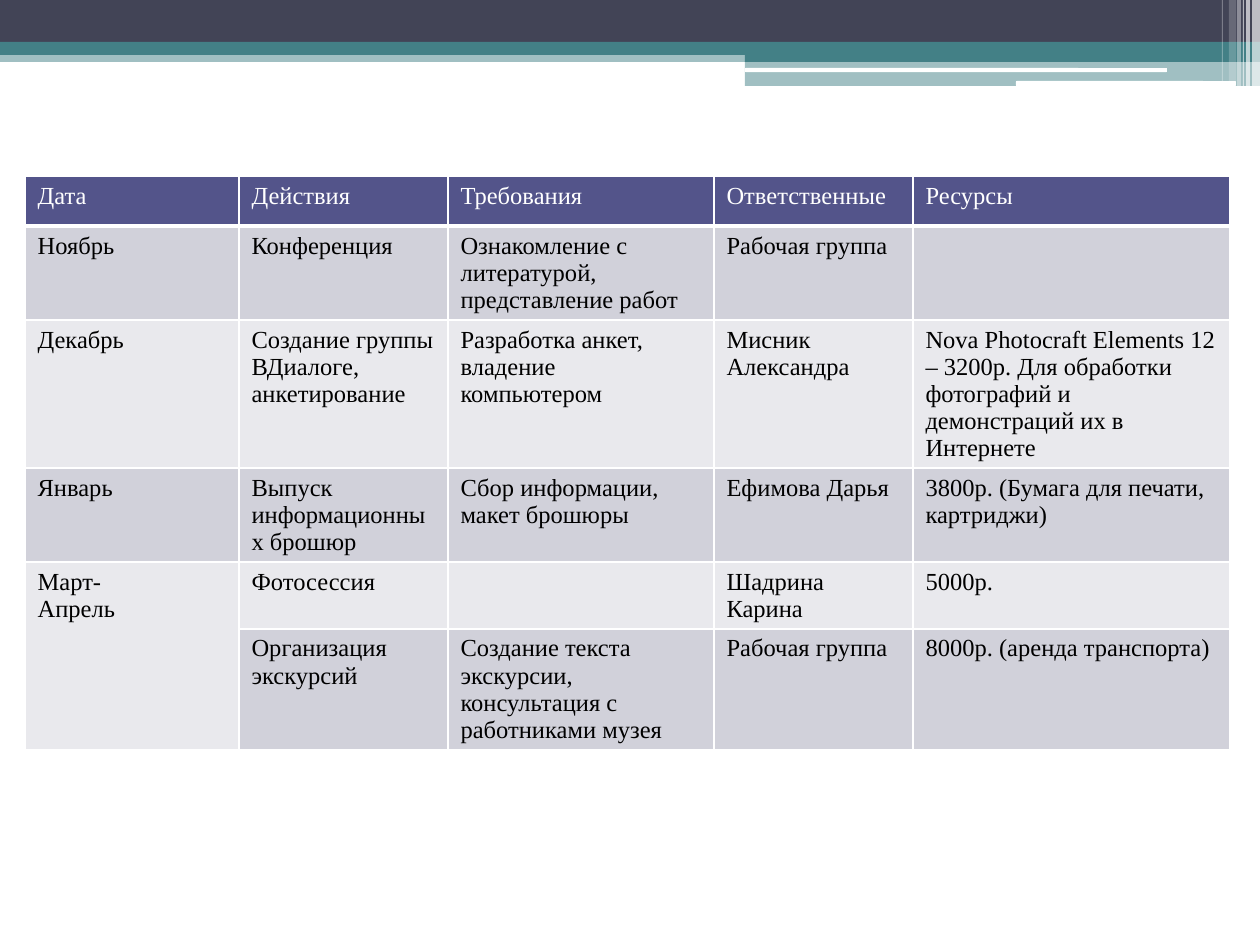
"""Build the project plan slide: a striped header band and a schedule table."""
from lxml.etree import SubElement
from pptx import Presentation
from pptx.dml.color import RGBColor
from pptx.enum.shapes import MSO_SHAPE
from pptx.oxml.ns import qn
from pptx.util import Pt

SCALE = 914400 / 126
HUES = {"white": "FFFFFF", "black": "000000", "slate": "424456", "teal": "438086",
        "head": "53548A", "dark": "D1D1DA", "light": "E9E9ED"}

BANDS = [
    (0, 50, 1260, 12, "teal", 50),
    (0, 0, 1260, 43, "slate", 100),
    (0, 42, 1260, 13, "teal", 100),
    (745, 49, 515, 13, "teal", 100),
    (745, 61, 515, 25, "teal", 50),
]
PILLS = [(745, 68, 422, 4), (1016, 81, 220, 5)]
STRIPES = [(1252, 8, 86, 65), (1246, 4, 86, 65), (1243, 1, 86, 60),
           (1237, 4, 86, 40), (1229, 7, 81, 20), (1222, 1, 81, 30)]

COLS = [214, 209, 266, 199, 317]
PLAN = [
    (50, "head", ["Дата", "Действия", "Требования", "Ответственные", "Ресурсы"]),
    (94, "dark", ["Ноябрь", "Конференция", "Ознакомление с литературой, представление работ",
                  "Рабочая группа", ""]),
    (148, "light", ["Декабрь", "Создание группы ВДиалоге, анкетирование",
                    "Разработка анкет, владение компьютером", "Мисник Александра",
                    "Nova Photocraft Elements 12 – 3200р. Для обработки фотографий "
                    "и демонстраций их в Интернете"]),
    (93, "dark", ["Январь", "Выпуск информационных брошюр",
                  "Сбор информации, макет брошюры", "Ефимова Дарья",
                  "3800р. (Бумага для печати, картриджи)"]),
    (67, "light", ["Март-\nАпрель", "Фотосессия", "", "Шадрина Карина", "5000р."]),
    (121, "dark", ["", "Организация экскурсий",
                   "Создание текста экскурсии, консультация с работниками музея",
                   "Рабочая группа", "8000р. (аренда транспорта)"]),
]


def px(num):
    return round(num * SCALE)


def hue(name):
    return RGBColor.from_string(HUES[name])


def block(slide, box, tone, alpha=100, kind=MSO_SHAPE.RECTANGLE):
    shape = slide.shapes.add_shape(kind, *map(px, box))
    shape.shadow.inherit = False
    shape.line.fill.background()
    shape.fill.solid()
    shape.fill.fore_color.rgb = hue(tone)
    if alpha < 100:
        paint = shape.fill._xPr.find(".//" + qn("a:srgbClr"))
        SubElement(paint, qn("a:alpha"), val=str(alpha * 1000))


def edge(cell, widths):
    props = cell._tc.get_or_add_tcPr()
    for side, width in widths.items():
        line = SubElement(props, qn("a:ln" + side), w=str(Pt(width)))
        fill = SubElement(line, qn("a:solidFill"))
        SubElement(fill, qn("a:srgbClr"), val=HUES["white"])


def write(cell, text, tone, ink):
    cell.fill.solid()
    cell.fill.fore_color.rgb = hue(tone)
    if not text:
        return
    cell.text = text
    form = {"name": "Times New Roman", "size": Pt(14), "bold": False}
    for para in cell.text_frame.paragraphs:
        for run in para.runs:
            for key, value in form.items():
                setattr(run.font, key, value)
            run.font.color.rgb = hue(ink)


def grid(slide):
    tall = sum(row[0] for row in PLAN)
    table = slide.shapes.add_table(len(PLAN), len(COLS), px(25), px(176),
                                   px(sum(COLS)), px(tall)).table
    for col, wide in zip(table.columns, COLS):
        col.width = px(wide)
    for r, (high, tone, texts) in enumerate(PLAN):
        table.rows[r].height = px(high)
        ink = "white" if r == 0 else "black"
        for c, text in enumerate(texts):
            cell = table.cell(r, c)
            edge(cell, {"L": 1, "R": 1, "T": 3 if r == 1 else 1, "B": 1 if r else 3})
            write(cell, text, tone, ink)
    table.cell(4, 0).merge(table.cell(5, 0))


def main():
    deck = Presentation()
    deck.slide_width, deck.slide_height = px(1260), px(945)
    slide = deck.slides.add_slide(deck.slide_layouts[6])
    for *box, tone, alpha in BANDS:
        block(slide, box, tone, alpha)
    for box in PILLS:
        block(slide, box, "white", kind=MSO_SHAPE.ROUNDED_RECTANGLE)
    for left, wide, high, alpha in STRIPES:
        block(slide, (left, 0, wide, high), "white", alpha)
    grid(slide)
    deck.save("out.pptx")


if __name__ == "__main__":
    main()
